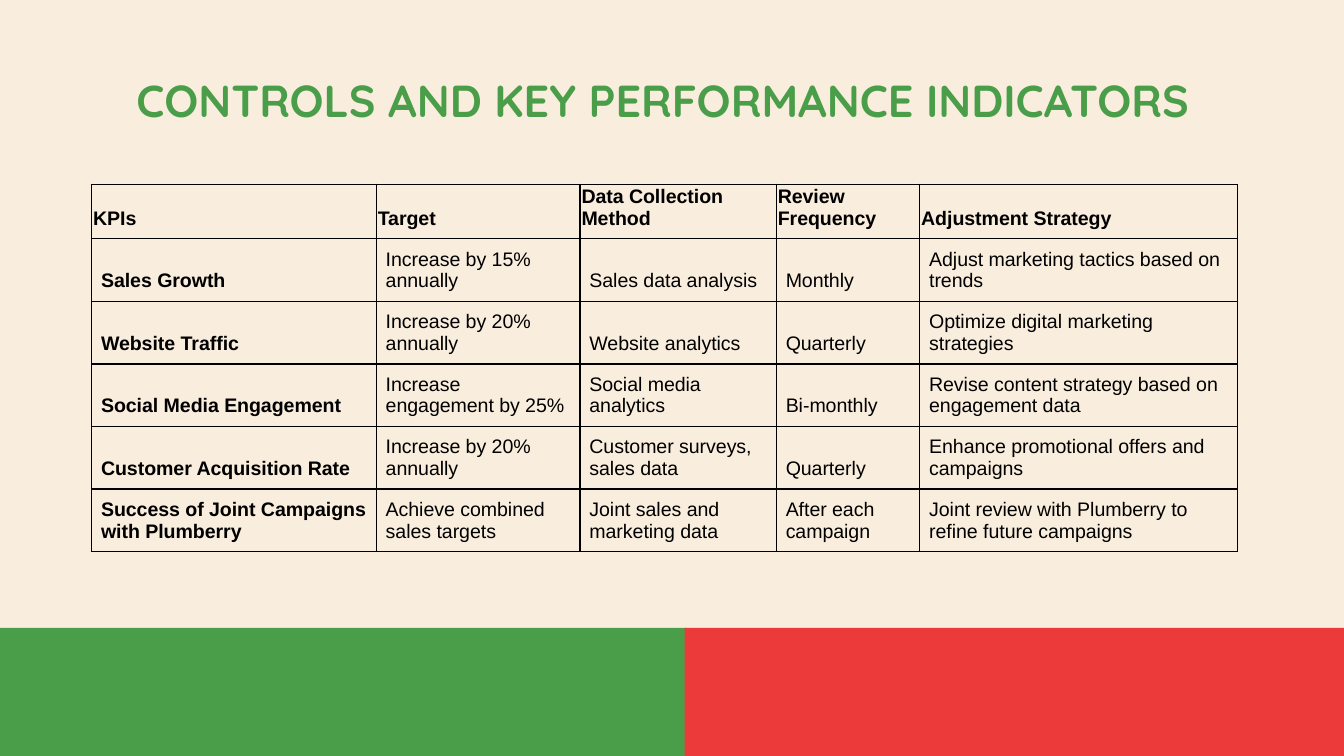
from dataclasses import dataclass

from lxml import etree
from pptx import Presentation
from pptx.dml.color import RGBColor
from pptx.enum.shapes import MSO_SHAPE
from pptx.enum.text import MSO_ANCHOR, MSO_AUTO_SIZE, PP_ALIGN
from pptx.oxml.ns import qn
from pptx.util import Cm, Pt

RECT = MSO_SHAPE.RECTANGLE
MIDDLE, BOTTOM = MSO_ANCHOR.MIDDLE, MSO_ANCHOR.BOTTOM
LEFT, CENTER = PP_ALIGN.LEFT, PP_ALIGN.CENTER
NO_FIT = MSO_AUTO_SIZE.NONE


@dataclass(frozen=True)
class Theme:
    cream: str = "F9EDDD"
    green: str = "4A9E4A"
    red: str = "EC3A3B"
    black: str = "000000"
    head_font: str = "Quicksand"
    body_font: str = "Arial"
    head_size: float = 24
    body_size: float = 10.5
    rule: float = 0.75


def write(frame, text, font, size, color, bold=False, align=LEFT):
    """Put one formatted paragraph into a text frame."""
    frame.word_wrap = True
    para = frame.paragraphs[0]
    para.alignment = align
    para.line_spacing = 1.0
    para.space_before = para.space_after = Pt(0)
    run = para.add_run()
    run.text = text
    run.font.name = font
    run.font.size = Pt(size)
    run.font.bold = bold
    run.font.color.rgb = RGBColor.from_string(color)


def inset(box, left, top, right, bottom):
    """Set the inner margins of a cell or text frame, in cm."""
    box.margin_left, box.margin_top = Cm(left), Cm(top)
    box.margin_right, box.margin_bottom = Cm(right), Cm(bottom)


class Page:
    def __init__(self, slide, theme):
        self.slide, self.theme = slide, theme
        fill = slide.background.fill
        fill.solid()
        fill.fore_color.rgb = RGBColor.from_string(theme.cream)

    def title(self, text, left, top, width, height):
        look = self.theme
        box = self.slide.shapes.title
        box.left, box.top = Cm(left), Cm(top)
        box.width, box.height = Cm(width), Cm(height)
        frame = box.text_frame
        frame.auto_size = NO_FIT
        frame.vertical_anchor = MIDDLE
        inset(frame, 0, 0, 0, 0)
        write(frame, text, look.head_font, look.head_size, look.green,
              bold=True, align=CENTER)

    def block(self, color, left, top, width, height):
        shape = self.slide.shapes.add_shape(
            RECT, Cm(left), Cm(top), Cm(width), Cm(height))
        shape.shadow.inherit = False
        shape.fill.solid()
        shape.fill.fore_color.rgb = RGBColor.from_string(color)
        shape.line.fill.background()

    def border(self, cell):
        props = cell._tc.get_or_add_tcPr()
        for side in ("lnL", "lnR", "lnT", "lnB"):
            line = etree.SubElement(props, qn(f"a:{side}"),
                                    w=str(Pt(self.theme.rule)))
            fill = etree.SubElement(line, qn("a:solidFill"))
            etree.SubElement(fill, qn("a:srgbClr"), val=self.theme.black)

    def table(self, rows, left, top, widths, heights):
        look = self.theme
        grid = self.slide.shapes.add_table(
            len(rows), len(widths), Cm(left), Cm(top),
            Cm(sum(widths)), Cm(sum(heights))).table
        grid.first_row = grid.horz_banding = False
        for col, width in zip(grid.columns, widths):
            col.width = Cm(width)
        for r, (row, height) in enumerate(zip(rows, heights)):
            grid.rows[r].height = Cm(height)
            pad = (0.03, 0.03, 0.03, 0.18) if r == 0 else (0.18,) * 4
            for c, text in enumerate(row):
                cell = grid.cell(r, c)
                self.border(cell)
                cell.fill.background()
                cell.vertical_anchor = BOTTOM
                inset(cell, *pad)
                write(cell.text_frame, text, look.body_font, look.body_size,
                      look.black, bold=r == 0 or c == 0)


ROWS = [
    ("KPIs", "Target", "Data Collection Method", "Review Frequency",
     "Adjustment Strategy"),
    ("Sales Growth", "Increase by 15% annually", "Sales data analysis",
     "Monthly", "Adjust marketing tactics based on trends"),
    ("Website Traffic", "Increase by 20% annually", "Website analytics",
     "Quarterly", "Optimize digital marketing strategies"),
    ("Social Media Engagement", "Increase engagement by 25%",
     "Social media analytics", "Bi-monthly",
     "Revise content strategy based on engagement data"),
    ("Customer Acquisition Rate", "Increase by 20% annually",
     "Customer surveys, sales data", "Quarterly",
     "Enhance promotional offers and campaigns"),
    ("Success of Joint Campaigns with Plumberry",
     "Achieve combined sales targets", "Joint sales and marketing data",
     "After each campaign",
     "Joint review with Plumberry to refine future campaigns"),
]


def main():
    deck = Presentation()
    deck.slide_width, deck.slide_height = Cm(25.4), Cm(14.29)
    theme = Theme()
    page = Page(deck.slides.add_slide(deck.slide_layouts[5]), theme)

    # Heading
    page.title("CONTROLS AND KEY PERFORMANCE INDICATORS ",
               1.73, 1.09, 21.82, 1.6)

    # KPI table: a low header row above equal rows
    page.table(ROWS, 1.73, 3.48, widths=(5.38, 3.85, 3.71, 2.71, 6),
               heights=[0.79] + [1.02] * (len(ROWS) - 1))

    # Footer band in two colours
    page.block(theme.green, 0, 11.87, 12.98, 2.42)
    page.block(theme.red, 12.94, 11.87, 12.46, 2.42)

    deck.save("out.pptx")


if __name__ == "__main__":
    main()
